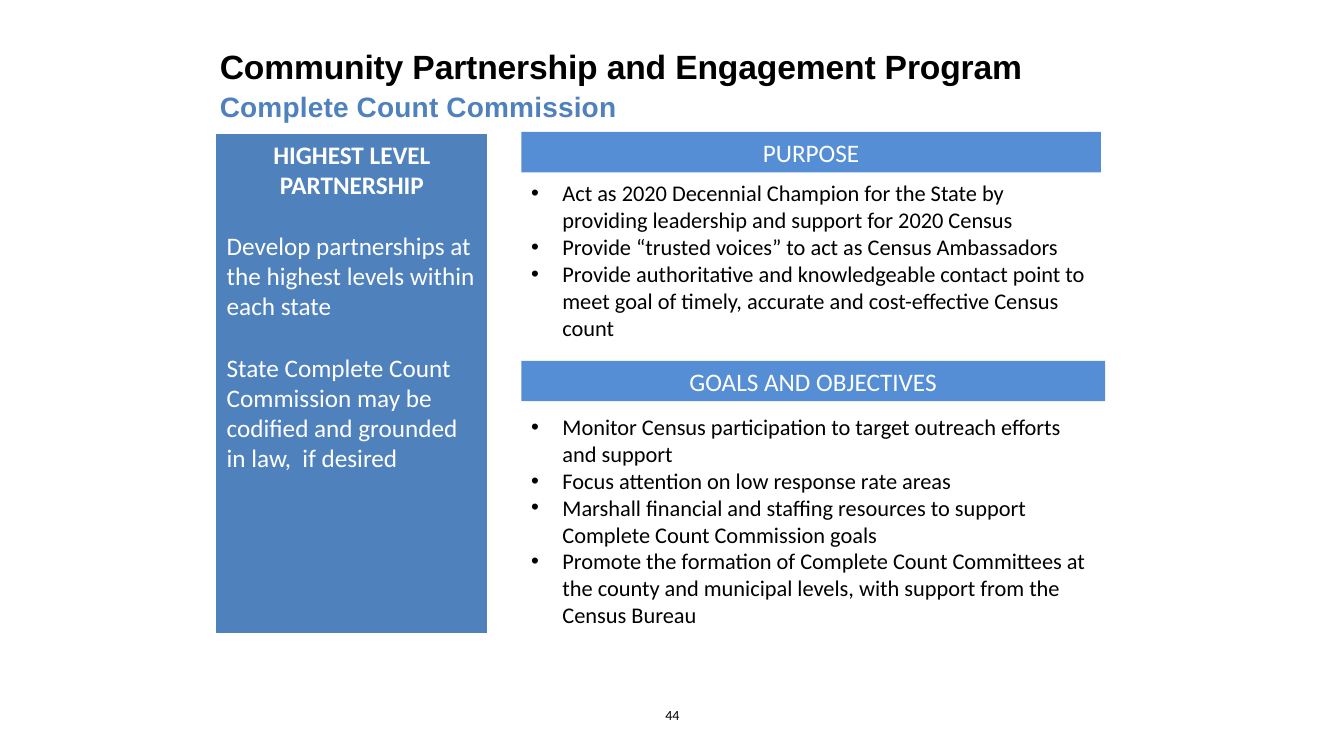
from dataclasses import dataclass

from lxml import etree
from pptx import Presentation
from pptx import util as u
from pptx.dml.color import RGBColor
from pptx.enum import shapes, text
from pptx.oxml.ns import qn

COLORS = {"black": "000000", "white": "FFFFFF", "blue": "4F81BD", "bar": "558ED5"}
INDENT = u.Inches(0.31)


@dataclass
class Section:
    heading: str
    top: float
    width: float
    body_top: float
    body_height: float
    bullets: list[str]


SECTIONS = [
    Section("PURPOSE", 1.31, 5.75, 1.73, 1.72, [
        "Act as 2020 Decennial Champion for the State by providing leadership and support for 2020 Census",
        "Provide “trusted voices” to act as Census Ambassadors",
        "Provide authoritative and knowledgeable contact point to meet goal of timely, accurate and "
        "cost-effective Census count",
    ]),
    Section("GOALS AND OBJECTIVES", 3.58, 5.79, 4.05, 2.52, [
        "Monitor Census participation to target outreach efforts and support",
        "Focus attention on low response rate areas",
        "Marshall financial and staffing resources to support Complete Count Commission goals",
        "Promote the formation of Complete Count Committees at the county and municipal levels, "
        "with support from the Census Bureau",
    ]),
]
SIDEBAR = [
    "HIGHEST LEVEL PARTNERSHIP",
    "Develop partnerships at the highest levels within each state",
    "State Complete Count Commission may be codified and grounded in law,  if desired",
]


def rgb(name: str) -> RGBColor:
    return RGBColor.from_string(COLORS[name])


def inches(*values: float) -> list[u.Length]:
    return [u.Inches(v) for v in values]


def prepare(tf, anchor=text.MSO_ANCHOR.TOP, margin: float | None = None) -> None:
    tf.word_wrap = True
    tf.auto_size = text.MSO_AUTO_SIZE.NONE
    tf.vertical_anchor = anchor
    if margin is not None:
        tf.margin_left = tf.margin_right = tf.margin_top = tf.margin_bottom = u.Inches(margin)


def add_paragraph(tf, first: bool, words: str, size: float, color: str, font: str = "Calibri",
                  bold: bool = False, align=text.PP_ALIGN.LEFT, spacing: int = 0):
    p = tf.paragraphs[0] if first else tf.add_paragraph()
    p.alignment = align
    r = p.add_run()
    r.text = words
    r.font.size, r.font.name, r.font.bold = u.Pt(size), font, bold
    r.font.color.rgb = rgb(color)
    if spacing:
        r._r.get_or_add_rPr().set("spc", str(spacing))
    return p


def set_indent(p, left: int, first_line: int = 0, bullet: str = "") -> None:
    pPr = p._p.get_or_add_pPr()
    pPr.set("marL", str(left))
    pPr.set("indent", str(first_line))
    if bullet:
        etree.SubElement(pPr, qn("a:buFont")).set("typeface", "Arial")
        etree.SubElement(pPr, qn("a:buChar")).set("char", bullet)


def add_panel(s, box: list[u.Length], fill: str):
    sp = s.shapes.add_shape(shapes.MSO_SHAPE.RECTANGLE, *box)
    sp.shadow.inherit = False
    sp.fill.solid()
    sp.fill.fore_color.rgb = rgb(fill)
    sp.line.fill.background()
    return sp


def add_title(s) -> None:
    sp = s.shapes.title
    sp.left, sp.top, sp.width, sp.height = inches(2.17, 0.5, 8.5, 0.73)
    tf = sp.text_frame
    prepare(tf, margin=0)
    lines = [("Community Partnership and Engagement Program", 24, "black", -10),
             ("Complete Count Commission", 20, "blue", 10)]
    for i, (words, size, color, spacing) in enumerate(lines):
        p = add_paragraph(tf, i == 0, words, size, color, "Arial", True, spacing=spacing)
        set_indent(p, u.Inches(0.01))
        p.line_spacing = u.Pt(25.9)
        p.space_before = u.Pt(0)


def add_sidebar(s) -> None:
    sp = add_panel(s, inches(2.15, 1.33, 2.68, 4.95), "blue")
    sp.line.color.rgb = rgb("blue")
    sp.line.width = u.Pt(0.75)
    prepare(sp.text_frame)
    for i, words in enumerate(SIDEBAR):
        align = text.PP_ALIGN.LEFT if i else text.PP_ALIGN.CENTER
        p = add_paragraph(sp.text_frame, i == 0, words, 18, "white", bold=i == 0, align=align)
        if i:
            p.space_before = u.Pt(22)


def add_section(s, section: Section) -> None:
    bar = add_panel(s, inches(5.17, section.top, section.width, 0.4), "bar")
    prepare(bar.text_frame, text.MSO_ANCHOR.MIDDLE)
    add_paragraph(bar.text_frame, True, section.heading, 18, "white", align=text.PP_ALIGN.CENTER)

    body = s.shapes.add_textbox(*inches(5.17, section.body_top, section.width, section.body_height))
    prepare(body.text_frame)
    for i, words in enumerate(section.bullets):
        p = add_paragraph(body.text_frame, i == 0, words, 16, "black")
        set_indent(p, INDENT, -INDENT, "•")


def add_page_number(s) -> None:
    sp = s.shapes.add_textbox(*inches(6.57, 7.01, 0.2, 0.17))
    prepare(sp.text_frame, margin=0)
    p = add_paragraph(sp.text_frame, True, "44", 10, "black", spacing=-10)
    set_indent(p, u.Inches(0.03))


def main() -> None:
    prs = Presentation()
    prs.slide_width, prs.slide_height = inches(13.33, 7.5)
    s = prs.slides.add_slide(prs.slide_layouts[5])
    # Heading and left column
    add_title(s)
    add_sidebar(s)
    # Right column
    for section in SECTIONS:
        add_section(s, section)
    # Footer
    add_page_number(s)
    prs.save("out.pptx")


if __name__ == "__main__":
    main()
